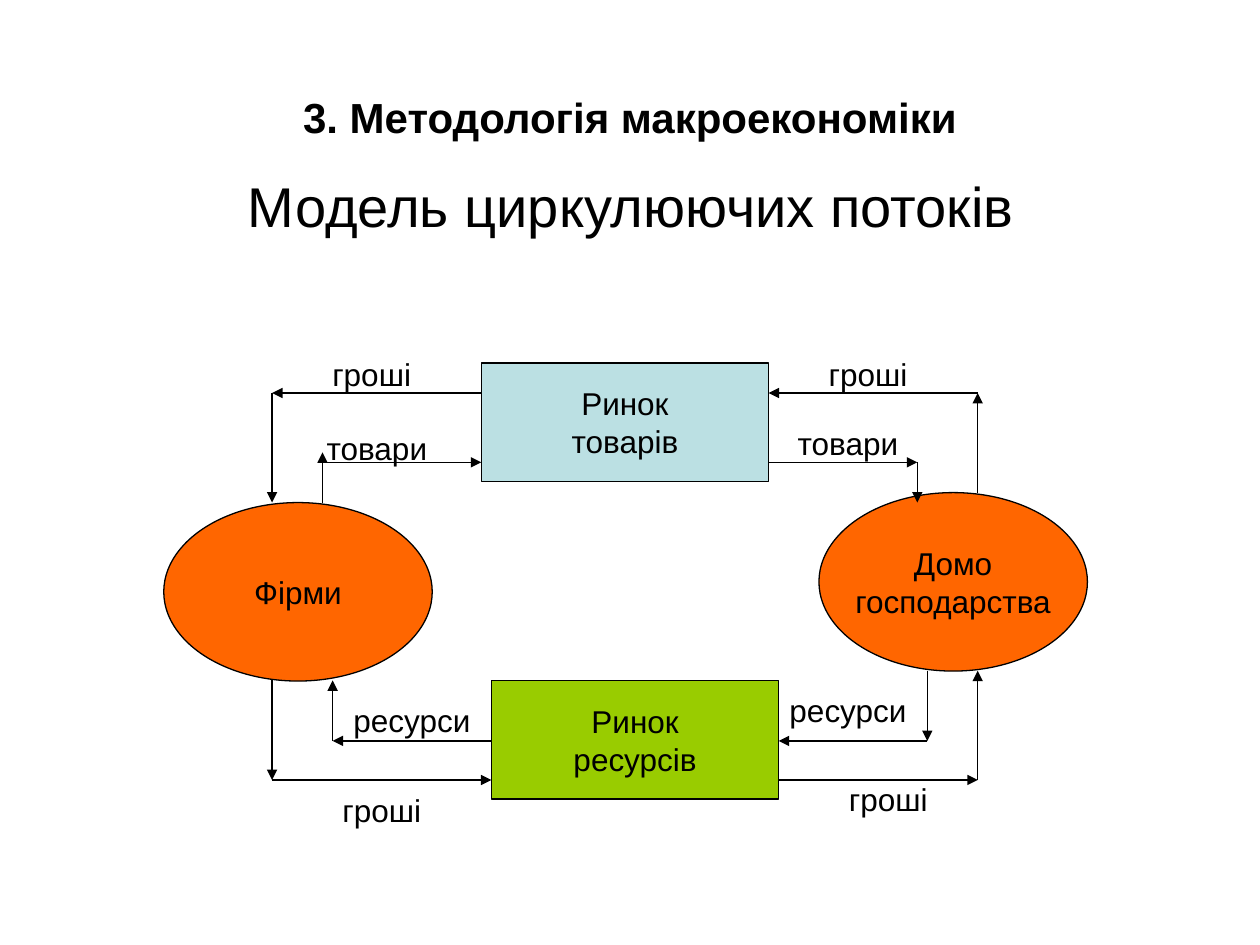
from itertools import pairwise

from lxml import etree
from pptx import Presentation
from pptx.dml.color import RGBColor
from pptx.enum.shapes import MSO_CONNECTOR, MSO_SHAPE
from pptx.enum.text import MSO_ANCHOR, PP_ALIGN
from pptx.oxml.ns import qn
from pptx.util import Pt

BLACK = RGBColor(0x00, 0x00, 0x00)
ORANGE = RGBColor(0xFF, 0x66, 0x00)
BLUE = RGBColor(0xBB, 0xE0, 0xE3)
GREEN = RGBColor(0x99, 0xCC, 0x00)

OVAL = MSO_SHAPE.OVAL
RECT = MSO_SHAPE.RECTANGLE
LINE = MSO_CONNECTOR.STRAIGHT
CENTER = PP_ALIGN.CENTER
TOP = MSO_ANCHOR.TOP
MIDDLE = MSO_ANCHOR.MIDDLE

FONT = "Arial"
THIN = Pt(0.75)
OVAL_SIZE = (153.4, 102)
RECT_SIZE = (164.2, 67.8)

# Nodes: form, left, top, size, fill, text
NODES = [
    (OVAL, 93.6, 287.2, OVAL_SIZE, ORANGE, "Фірми"),
    (OVAL, 468, 281.5, OVAL_SIZE, ORANGE, "Домо\nгосподарства"),
    (RECT, 275, 207.4, RECT_SIZE, BLUE, "Ринок\nтоварів"),
    (RECT, 280.8, 388.8, RECT_SIZE, GREEN, "Ринок\nресурсів"),
]

# Labels: text, left, top, width, height
LABELS = [
    ("товари", 172.8, 236.2, 85, 39.6),
    ("товари", 439.2, 236.2, 90.7, 33.8),
    ("гроші", 172.8, 196.6, 79.2, 33.8),
    ("гроші", 456.5, 196.6, 79.2, 33.8),
    ("гроші", 468, 439.9, 79.2, 33.8),
    ("гроші", 178.6, 451.4, 79.2, 22.3),
    ("ресурси", 195.8, 394.6, 79.2, 33.8),
    ("ресурси", 445, 388.8, 79.2, 33.8),
]

# Flows: the corners that each run of arrows passes
FLOWS = [
    [(184.3, 287.2), (184.3, 258.5)],
    [(184.3, 264.2), (275, 264.2)],
    [(439.2, 264.2), (524.2, 264.2), (524.2, 287.2)],
    [(558.7, 281.5), (558.7, 224.6), (439.2, 224.6)],
    [(275, 224.6), (155.5, 224.6), (155.5, 287.2)],
    [(529.9, 383.3), (529.9, 423.4), (445, 423.4)],
    [(280.8, 423.4), (190.1, 423.4), (190.1, 388.8)],
    [(155.5, 388.8), (155.5, 445.7), (280.8, 445.7)],
    [(445, 445.7), (558.7, 445.7), (558.7, 383.3)],
]


def write(shape, text, size=18, bold=False, wrap=False, anchor=MIDDLE, before=0):
    frame = shape.text_frame
    frame.word_wrap = wrap
    frame.vertical_anchor = anchor
    frame.margin_left = frame.margin_right = 0
    frame.text = text
    for para in frame.paragraphs:
        para.alignment = CENTER
        para.space_before = Pt(before)
        font = para.font
        font.name = FONT
        font.size = Pt(size)
        font.bold = bold
        font.color.rgb = BLACK


def label(slide, text, left, top, width, height, **style):
    box = slide.shapes.add_textbox(Pt(left), Pt(top), Pt(width), Pt(height))
    write(box, text, **style)


def node(slide, form, left, top, size, fill, text):
    width, height = size
    shape = slide.shapes.add_shape(form, Pt(left), Pt(top), Pt(width), Pt(height))
    shape.shadow.inherit = False
    shape.fill.solid()
    shape.fill.fore_color.rgb = fill
    shape.line.color.rgb = BLACK
    shape.line.width = THIN
    write(shape, text)


def arrow(slide, start, end):
    line = slide.shapes.add_connector(LINE, *map(Pt, start + end))
    line.line.color.rgb = BLACK
    line.line.width = THIN
    props = line.element.spPr
    etree.SubElement(props.find(qn("a:ln")), qn("a:tailEnd"), type="triangle")
    etree.SubElement(props, qn("a:effectLst"))


def main():
    deck = Presentation()
    deck.slide_width, deck.slide_height = Pt(720), Pt(540)
    slide = deck.slides.add_slide(deck.slide_layouts[6])

    label(slide, "3. Методологія макроекономіки", 36, 21.6, 648, 90,
          size=24, bold=True, wrap=True)
    label(slide, "Модель циркулюючих потоків", 36.7, 94.3, 648, 388,
          size=32, wrap=True, anchor=TOP, before=6.4)
    for item in NODES:
        node(slide, *item)
    for item in LABELS:
        label(slide, *item)
    for flow in FLOWS:
        for start, end in pairwise(flow):
            arrow(slide, start, end)

    deck.save("out.pptx")


if __name__ == "__main__":
    main()
